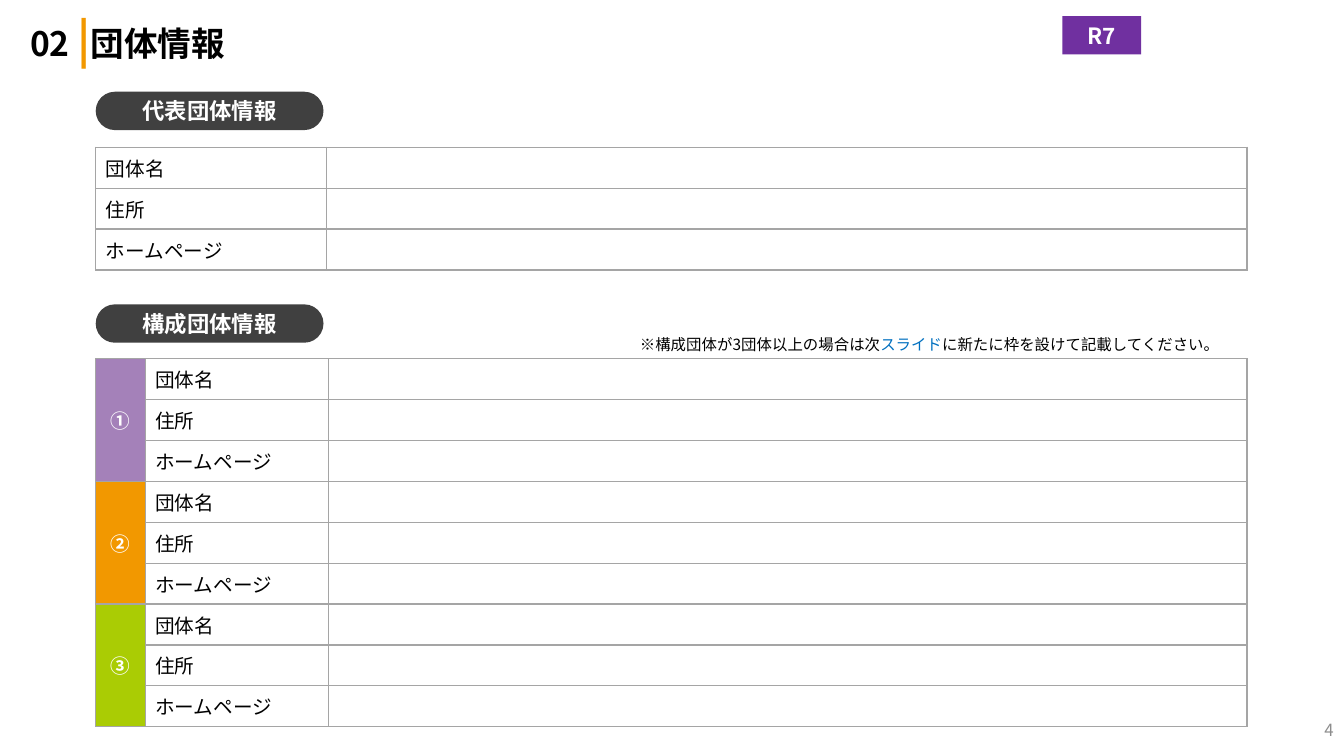
from lxml.etree import SubElement
from pptx import Presentation
from pptx.dml.color import RGBColor
from pptx.enum.shapes import MSO_SHAPE
from pptx.enum.text import MSO_ANCHOR, PP_ALIGN
from pptx.oxml.ns import qn
from pptx.util import Pt

theme = {
    "font": "Noto Sans CJK JP",
    "black": "000000", "white": "FFFFFF", "grid": "A5A5A5",
    "heading": "404040", "badge": "7030A0", "accent": "F29800",
    "link": "0070C0", "number": "8C8C8C",
    "groups": ["A481B9", "F29800", "AACC04"],
    "title_size": 24, "bar_size": 32, "heading_size": 16,
    "table_size": 14, "note_size": 11, "number_size": 12,
}


def write(paragraph, text, *, size, color="black", bold=False, align=PP_ALIGN.LEFT):
    paragraph.alignment = align
    if text:
        run = paragraph.add_run()
        run.text = text
        run.font.size = Pt(size)
        run.font.bold = bold
        run.font.color.rgb = RGBColor.from_string(theme[color])
        run.font.name = theme["font"]
        SubElement(run._r.get_or_add_rPr(), qn("a:ea"), typeface=theme["font"])
    else:
        SubElement(paragraph._p, qn("a:endParaRPr"), sz=str(size * 100))


def add_grid(left, top, widths, row_count, row_height):
    frame = slide.shapes.add_table(
        row_count, len(widths), Pt(left), Pt(top), Pt(sum(widths)), Pt(row_count * row_height))
    table = frame.table
    table.first_row = False
    table.horz_banding = False
    for column, width in zip(table.columns, widths):
        column.width = Pt(width)
    for row in table.rows:
        row.height = Pt(row_height)
        for cell in row.cells:
            cell.vertical_anchor = MSO_ANCHOR.MIDDLE
            properties = cell._tc.get_or_add_tcPr()
            for side in ("a:lnL", "a:lnR", "a:lnT", "a:lnB"):
                line = SubElement(properties, qn(side), w=str(Pt(1)))
                fill = SubElement(line, qn("a:solidFill"))
                SubElement(fill, qn("a:srgbClr"), val=theme["grid"])
            cell.fill.background()
    return table


presentation = Presentation()
presentation.slide_width = Pt(960)
presentation.slide_height = Pt(540)
slide = presentation.slides.add_slide(presentation.slide_layouts[6])

text_boxes = [
    ((14.4, 6.5, 784.8, 47.5), MSO_ANCHOR.MIDDLE, 0.9, 0, [
        ("02 ", {"size": theme["title_size"], "bold": True}),
        ("|", {"size": theme["bar_size"], "color": "accent", "bold": True}),
        ("団体情報", {"size": theme["title_size"], "bold": True}),
    ]),
    ((450, 233.3, 433.4, 23), MSO_ANCHOR.TOP, 1.2, 6, [
        ("※構成団体が3団体以上の場合は次", {"size": theme["note_size"]}),
        ("スライド", {"size": theme["note_size"], "color": "link"}),
        ("に新たに枠を設けて記載してください。", {"size": theme["note_size"]}),
    ]),
    ((743.8, 512, 216, 18), MSO_ANCHOR.MIDDLE, 1, 0, [
        ("4", {"size": theme["number_size"], "color": "number", "align": PP_ALIGN.RIGHT}),
    ]),
]
for box, anchor, line_spacing, space_after, runs in text_boxes:
    text_frame = slide.shapes.add_textbox(*map(Pt, box)).text_frame
    text_frame.word_wrap = True
    text_frame.vertical_anchor = anchor
    paragraph = text_frame.paragraphs[0]
    paragraph.line_spacing = line_spacing
    paragraph.space_after = Pt(space_after)
    for text, style in runs:
        write(paragraph, text, **style)

labels = [
    ("代表団体情報", (68.4, 65.5, 162.7, 27.4), 0.5, "heading"),
    ("構成団体情報", (68.4, 217.4, 162.7, 27.4), 0.5, "heading"),
    ("R7", (758.9, 11.5, 56.2, 27.4), 0, "badge"),
]
for text, box, rounding, color in labels:
    shape = slide.shapes.add_shape(MSO_SHAPE.ROUNDED_RECTANGLE, *map(Pt, box))
    shape.adjustments[0] = rounding
    shape.shadow.inherit = False
    shape.fill.solid()
    shape.fill.fore_color.rgb = RGBColor.from_string(theme[color])
    shape.line.fill.background()
    shape.text_frame.vertical_anchor = MSO_ANCHOR.MIDDLE
    write(shape.text_frame.paragraphs[0], text, size=theme["heading_size"],
          color="white", bold=True, align=PP_ALIGN.CENTER)

fields = ["団体名", "住所", "ホームページ"]
lead_table = add_grid(68.4, 105.1, [164.9, 657.4], len(fields), 29.28)
member_table = add_grid(68.4, 256.3, [35.3, 131, 656], 3 * len(fields), 29.2)

for table, label_column in ((lead_table, 0), (member_table, 1)):
    for row_index, row in enumerate(table.rows):
        for column_index, cell in enumerate(row.cells):
            is_label = column_index == label_column
            is_group = column_index < label_column and row_index % len(fields) == 0
            if not is_group:
                text = fields[row_index % len(fields)] if is_label else ""
                write(cell.text_frame.paragraphs[0], text, size=theme["table_size"])

for index, (number, color) in enumerate(zip("①②③", theme["groups"])):
    first_row = index * len(fields)
    cell = member_table.cell(first_row, 0)
    cell.merge(member_table.cell(first_row + len(fields) - 1, 0))
    cell.fill.solid()
    cell.fill.fore_color.rgb = RGBColor.from_string(color)
    write(cell.text_frame.paragraphs[0], number, size=theme["table_size"],
          color="white", bold=True, align=PP_ALIGN.CENTER)

presentation.save("out.pptx")
